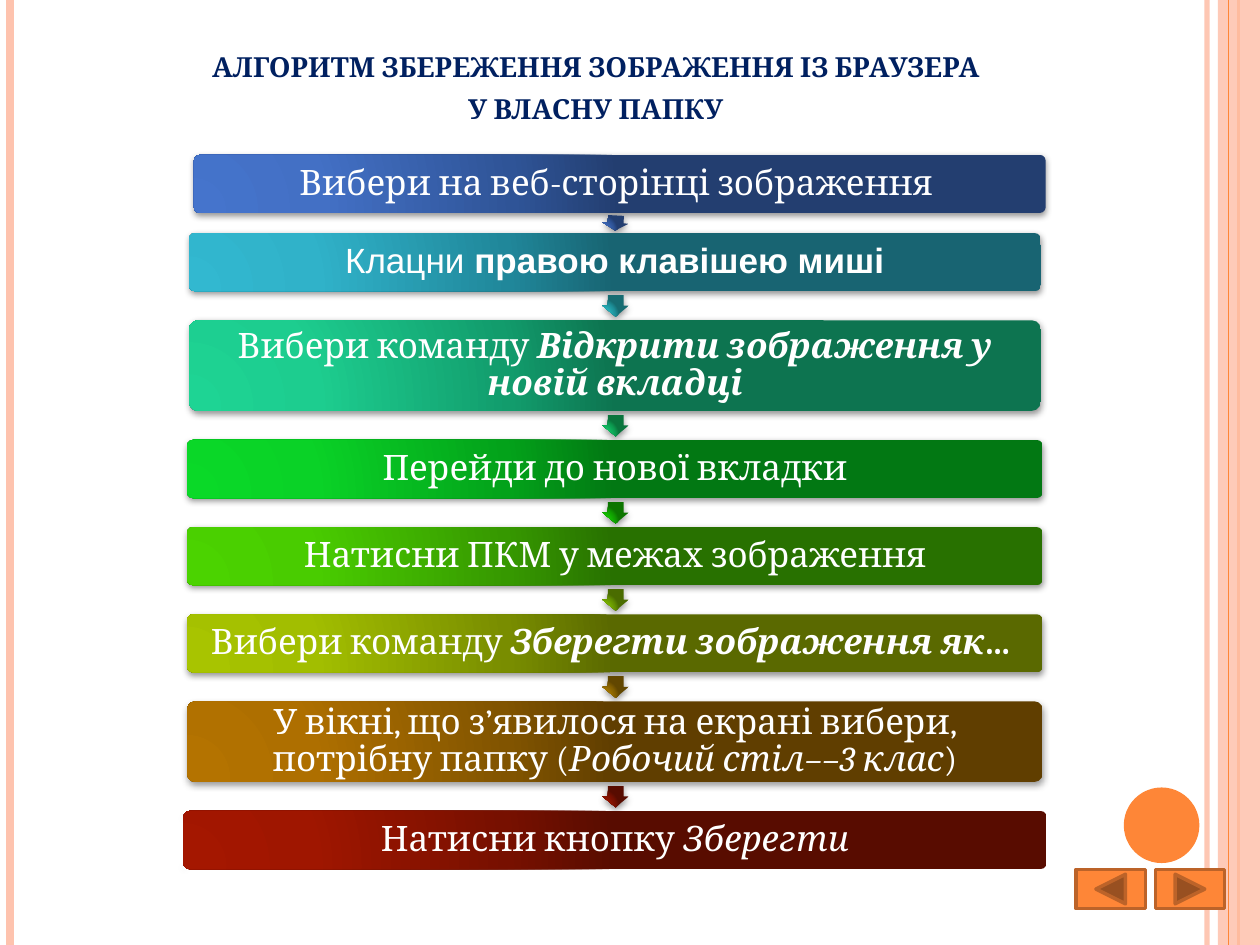
from lxml.etree import SubElement
from pptx import Presentation
from pptx.dml.color import RGBColor
from pptx.enum.shapes import MSO_CONNECTOR, MSO_SHAPE
from pptx.enum.text import MSO_ANCHOR, PP_ALIGN
from pptx.oxml import parse_xml
from pptx.oxml.ns import nsdecls, qn
from pptx.util import Pt

WHITE = RGBColor(0xFF, 0xFF, 0xFF)
NAVY = RGBColor(0x00, 0x20, 0x60)
ORANGE = RGBColor(0xFE, 0x86, 0x37)
PEACH = RGBColor(0xFE, 0xC3, 0xAE)
BROWN = RGBColor(0xBC, 0x63, 0x29)

SHADOW = f"""<a:effectLst {nsdecls('a')}>
  <a:outerShdw blurRad="{Pt(4)}" dist="{Pt(1.6)}" dir="5400000" rotWithShape="0">
    <a:srgbClr val="000000"><a:alpha val="42000"/></a:srgbClr>
  </a:outerShdw></a:effectLst>"""


def add_text(paragraph, text, font="Cambria", size=20, color=WHITE,
             bold=False, italic=False, small_caps=False):
    run = paragraph.add_run()
    run.text = text
    run.font.name = font
    run.font.size = Pt(size)
    run.font.color.rgb = color
    run.font.bold = bold
    run.font.italic = italic
    if small_caps:
        run.font._element.set("cap", "small")


def apply_glow(shape, light, dark):
    """Fill with a radial gradient from light (lower left) to dark, with a soft shadow."""
    start, end = RGBColor.from_string(light), RGBColor.from_string(dark)
    stops = [(0, start), (30, [c * 0.967 for c in start]),
             (75, [c * 1.347 for c in end]), (100, end)]
    stop_xml = "".join(
        f'<a:gs pos="{position * 1000}"><a:srgbClr val="{RGBColor(*map(round, color))}"/></a:gs>'
        for position, color in stops)
    gradient = parse_xml(
        f'<a:gradFill {nsdecls("a")} rotWithShape="1"><a:gsLst>{stop_xml}</a:gsLst>'
        '<a:path path="circle"><a:fillToRect l="5000" t="100000" r="120000" b="10000"/>'
        '</a:path></a:gradFill>')
    shape.line.fill.background()
    properties = shape._element.spPr
    properties.find(qn("a:prstGeom")).addnext(gradient)
    properties.append(parse_xml(SHADOW))


presentation = Presentation()
presentation.slide_width = Pt(720)
presentation.slide_height = Pt(540)
slide = presentation.slides.add_slide(presentation.slide_layouts[6])
shapes = slide.shapes

# Side stripes: x, width, color, opacity in percent
stripes = [(689.8, 3, PEACH, 93), (5.8, 4.5, PEACH, 100),
           (707.8, 1.5, ORANGE, 100), (702, 0.75, ORANGE, 100)]
for x, width, color, opacity in stripes:
    stripe = shapes.add_connector(MSO_CONNECTOR.STRAIGHT, Pt(x), 0, Pt(x), Pt(540))
    stripe.line.width = Pt(width)
    stripe.line.color.rgb = color
    SubElement(stripe._element.spPr, qn("a:effectLst"))
    if opacity < 100:
        color_element = stripe.line._ln.find(".//" + qn("a:srgbClr"))
        SubElement(color_element, qn("a:alpha")).set("val", str(opacity * 1000))
    if color == ORANGE and width == 1.5:
        band = shapes.add_shape(MSO_SHAPE.RECTANGLE, Pt(696), 0, Pt(24), Pt(540))
        band.shadow.inherit = False
        band.line.fill.background()
        band.fill.solid()
        band.fill.fore_color.rgb = PEACH
        color_element = band._element.spPr.find(".//" + qn("a:srgbClr"))
        SubElement(color_element, qn("a:alpha")).set("val", "87000")

disc = shapes.add_shape(MSO_SHAPE.OVAL, Pt(642.2), Pt(450), Pt(43.2), Pt(43.2))
disc.shadow.inherit = False
disc.fill.solid()
disc.fill.fore_color.rgb = ORANGE
disc.line.fill.background()

# Title
title = shapes.add_textbox(Pt(14.4), Pt(24.5), Pt(652.3), Pt(50))
title_frame = title.text_frame
title_frame.word_wrap = True
title_frame.margin_top = title_frame.margin_bottom = 0
title_lines = ["алгоритм збереження зображення із браузера", "у власну папку"]
for index, line in enumerate(title_lines):
    paragraph = title_frame.paragraphs[0] if index == 0 else title_frame.add_paragraph()
    paragraph.alignment = PP_ALIGN.CENTER
    paragraph.line_spacing = Pt(24)
    add_text(paragraph, line, size=19.8, color=NAVY, bold=True, small_caps=True)

# Steps: center x, width, height, box colors, colors of the arrow below, text runs
BOLD, ITALIC = {"bold": True}, {"italic": True}
BOLD_ITALIC = BOLD | ITALIC
ARIAL = {"font": "Arial"}
steps = [
    (354.2, 486.7, 33.2, ("4574CC", "233E70"), ("4574CC", "233E70"),
     [("Вибери на веб-сторінці зображення ", {})]),
    (351.4, 486.7, 33.2, ("32B8D0", "186472"), ("2FC6D0", "166C72"),
     [("Клацни ", ARIAL), ("правою клавішею миші", ARIAL | BOLD)]),
    (351.4, 486.7, 51.8, ("1ED494", "0D7450"), ("17D673", "09753D"),
     [("Вибери команду ", {}), ("Відкрити зображення у новій вкладці", BOLD_ITALIC)]),
    (351.4, 488.9, 33.2, ("0AD928", "027813"), ("17DB00", "0C7500"),
     [("Перейди до нової вкладки", {})]),
    (351.4, 488.9, 33.2, ("4BD300", "287100"), ("8AC900", "4A6C00"),
     [("Натисни ПКМ у межах зображення", {})]),
    (351.4, 488.9, 33.2, ("A8C400", "5A6900"), ("B78400", "624700"),
     [("Вибери команду ", {}), ("Зберегти зображення як", BOLD_ITALIC), ("… ", BOLD)]),
    (351.4, 488.9, 46, ("B47300", "603E00"), ("A41700", "580C00"),
     [("У вікні, що з’явилося на екрані вибери, потрібну папку (", {}),
      ("Робочий стіл––3 клас", ITALIC), (")", {})]),
    (351.4, 493.2, 33.2, ("A41700", "580C00"), None,
     [("Натисни кнопку ", {}), ("Зберегти", ITALIC)]),
]
top = 88.5
for index, (center, width, height, box_colors, arrow_colors, runs) in enumerate(steps):
    box = shapes.add_shape(MSO_SHAPE.ROUNDED_RECTANGLE, Pt(center - width / 2), Pt(top),
                           Pt(width), Pt(height))
    box.adjustments[0] = 0.1
    apply_glow(box, *box_colors)
    frame = box.text_frame
    frame.word_wrap = True
    frame.vertical_anchor = MSO_ANCHOR.MIDDLE
    frame.margin_left = frame.margin_right = Pt(6)
    frame.margin_top = frame.margin_bottom = Pt(6)
    paragraph = frame.paragraphs[0]
    paragraph.alignment = PP_ALIGN.CENTER
    paragraph.line_spacing = 0.9
    for text, text_format in runs:
        add_text(paragraph, text, **text_format)

    gap = 11.5 if index == 0 else 16.6
    if arrow_colors:
        length, thickness = gap * 0.75, 15
        arrow = shapes.add_shape(
            MSO_SHAPE.RIGHT_ARROW, Pt(351.8 - length / 2),
            Pt(top + height + gap / 2 - thickness / 2), Pt(length), Pt(thickness))
        arrow.adjustments[0] = 0.6
        arrow.adjustments[1] = 0.5
        arrow.rotation = 93 if index == 0 else 90
        apply_glow(arrow, *arrow_colors)
    top += height + gap

# Navigation buttons
buttons = [(614.9, MSO_SHAPE.ACTION_BUTTON_BACK_OR_PREVIOUS),
           (660.2, MSO_SHAPE.ACTION_BUTTON_FORWARD_OR_NEXT)]
for left, kind in buttons:
    button = shapes.add_shape(kind, Pt(left), Pt(496.8), Pt(39.6), Pt(22.5))
    button.shadow.inherit = False
    button.fill.solid()
    button.fill.fore_color.rgb = ORANGE
    button.line.color.rgb = BROWN
    button.line.width = Pt(2)

presentation.save("out.pptx")
